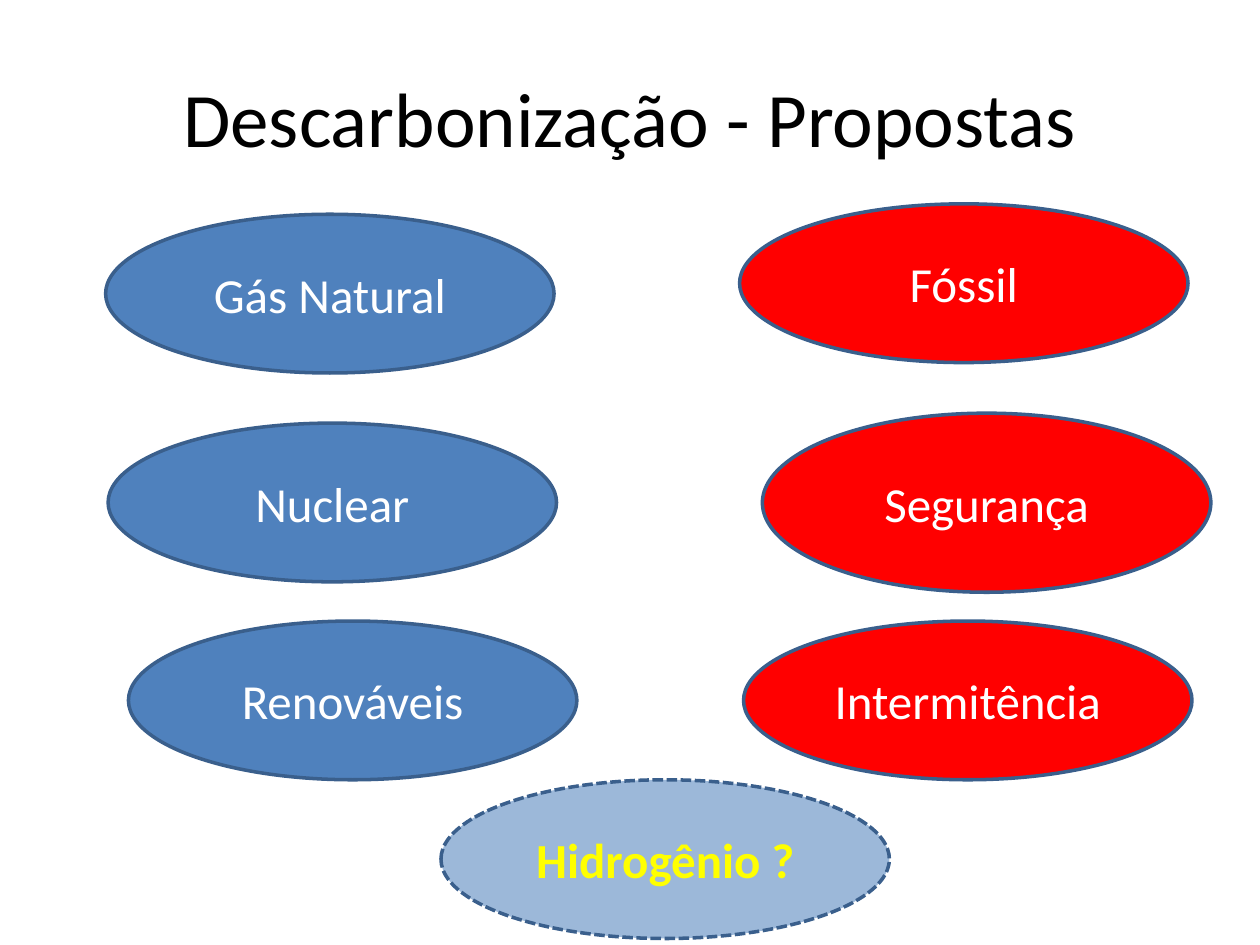
from dataclasses import dataclass

import lxml.etree
import pptx
import pptx.dml.color
import pptx.enum.dml
import pptx.enum.shapes
import pptx.enum.text
import pptx.oxml.ns
import pptx.util
from pptx.util import Cm


@dataclass(frozen=True)
class Theme:
    font: str = "Calibri"
    title_size: int = 44
    label_size: int = 28
    title: str = "000000"
    proposal: str = "4F81BD"
    obstacle: str = "FF0000"
    outline: str = "3A5F8C"
    label: str = "FFFFFF"
    highlight: str = "FFFF00"


theme = Theme()


def rgb(value):
    return pptx.dml.color.RGBColor.from_string(value)


def format_paragraph(text_frame, text, size, color):
    """Set a centred one-paragraph text and return its paragraph."""
    text_frame.text = text
    text_frame.word_wrap = True
    text_frame.vertical_anchor = pptx.enum.text.MSO_ANCHOR.MIDDLE
    paragraph = text_frame.paragraphs[0]
    paragraph.alignment = pptx.enum.text.PP_ALIGN.CENTER
    paragraph.font.name = theme.font
    paragraph.font.size = pptx.util.Pt(size)
    paragraph.font.color.rgb = rgb(color)
    return paragraph


presentation = pptx.Presentation()
presentation.slide_width = Cm(25.4)
presentation.slide_height = Cm(19.05)
slide = presentation.slides.add_slide(presentation.slide_layouts[5])

title = slide.shapes.title
title.left, title.top, title.width, title.height = Cm(1.27), Cm(0.76), Cm(22.86), Cm(3.18)
format_paragraph(title.text_frame, "Descarbonização - Propostas", theme.title_size, theme.title)

ellipse_width = 9.04
ellipse_height = 3.2
tall_height = 3.61

# Text, left, top, height, fill, text colour
ellipses = [
    ("Gás Natural", 2.13, 4.32, ellipse_height, theme.proposal, theme.label),
    ("Nuclear", 2.18, 8.53, ellipse_height, theme.proposal, theme.label),
    ("Renováveis", 2.59, 12.52, ellipse_height, theme.proposal, theme.label),
    ("Fóssil", 14.91, 4.11, ellipse_height, theme.obstacle, theme.label),
    ("Segurança", 15.37, 8.33, tall_height, theme.obstacle, theme.label),
    ("Intermitência", 14.99, 12.52, ellipse_height, theme.obstacle, theme.label),
    ("Hidrogênio ?", 8.89, 15.72, ellipse_height, theme.proposal, theme.highlight),
]

for text, left, top, height, fill, text_color in ellipses:
    shape = slide.shapes.add_shape(
        pptx.enum.shapes.MSO_SHAPE.OVAL, Cm(left), Cm(top), Cm(ellipse_width), Cm(height)
    )
    shape.shadow.inherit = False
    shape.fill.solid()
    shape.fill.fore_color.rgb = rgb(fill)
    shape.line.color.rgb = rgb(theme.outline)
    shape.line.width = pptx.util.Pt(2)
    paragraph = format_paragraph(shape.text_frame, text, theme.label_size, text_color)

# The last ellipse, hydrogen, is still open: dashed, see-through and bold
paragraph.font.bold = True
shape.line.dash_style = pptx.enum.dml.MSO_LINE.SQUARE_DOT
fill_color = shape.element.spPr.find("./" + pptx.oxml.ns.qn("a:solidFill"))[0]
lxml.etree.SubElement(fill_color, pptx.oxml.ns.qn("a:alpha"), val="56000")

presentation.save("out.pptx")
